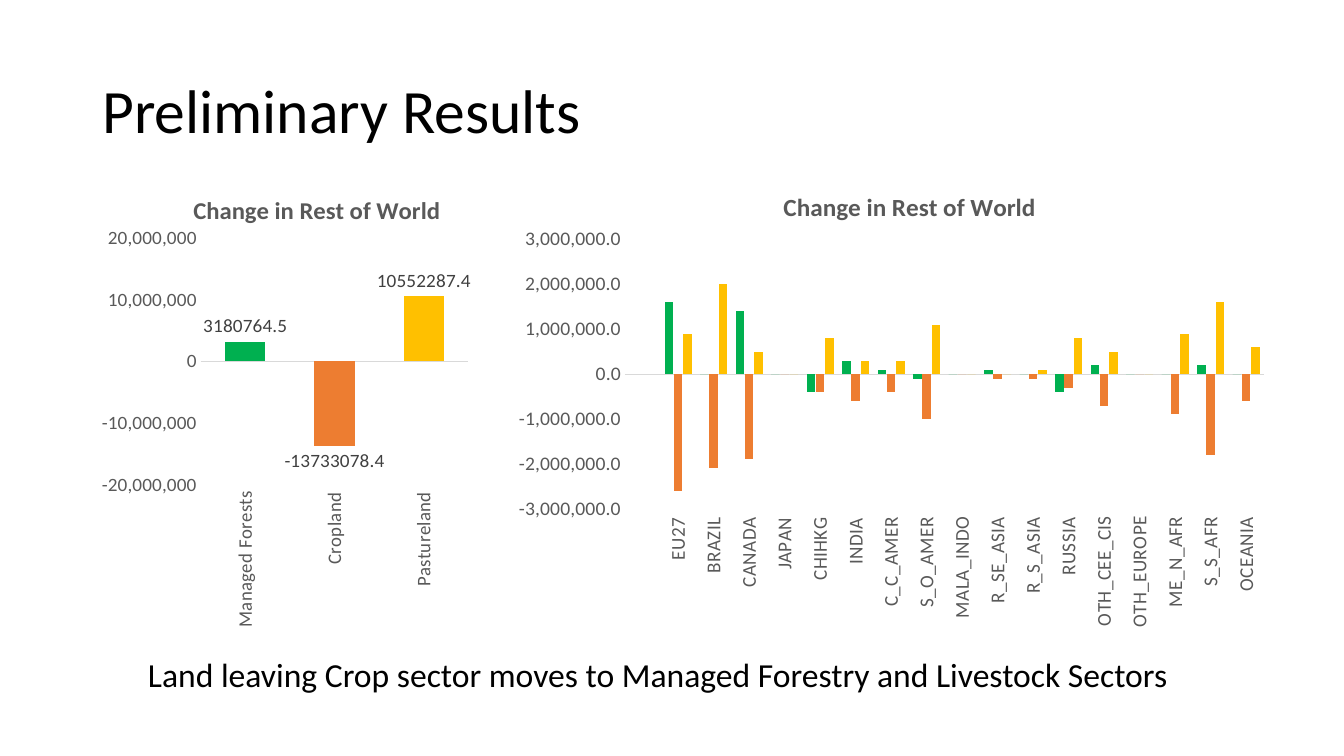
from lxml import etree
from pptx import Presentation
from pptx.chart.data import CategoryChartData as Data
from pptx.dml.color import RGBColor as RGB
from pptx.enum.chart import XL_CHART_TYPE as Kind, XL_LABEL_POSITION as Spot
from pptx.enum.chart import XL_TICK_LABEL_POSITION as Tick, XL_TICK_MARK as Mark
from pptx.enum.text import MSO_ANCHOR as Anchor
from pptx.oxml.ns import qn
from pptx.util import Pt

FONT = "Calibri"
COLORS = {"black": "000000", "grey": "595959", "dark": "404040", "line": "D9D9D9",
          "forest": "00B050", "crop": "ED7D31", "pasture": "FFC000"}
LANDS = ["forest", "crop", "pasture"]


def style(font, size, color, bold=False):
    font.name, font.size, font.bold = FONT, Pt(size), bold
    font.color.rgb = RGB.from_string(COLORS[color])


def place(parent, index, **box):
    for old in parent.findall(qn("c:layout")):
        parent.remove(old)
    layout = etree.Element(qn("c:layout"))
    manual = etree.SubElement(layout, qn("c:manualLayout"))
    if "w" in box:
        etree.SubElement(manual, qn("c:layoutTarget")).set("val", "inner")
    for key in ("x", "y"):
        etree.SubElement(manual, qn(f"c:{key}Mode")).set("val", "edge")
    for key, value in box.items():
        etree.SubElement(manual, qn(f"c:{key}")).set("val", str(value))
    parent.insert(index, layout)


prs = Presentation()
prs.slide_width, prs.slide_height = Pt(960), Pt(540)
slide = prs.slides.add_slide(prs.slide_layouts[6])

texts = [
    ("Preliminary Results", (66, 28.8, 828, 104.4), 44, Anchor.MIDDLE, 0.9),
    ("Land leaving Crop sector moves to Managed Forestry and Livestock Sectors",
     (98.6, 463.7, 836.6, 36), 24, Anchor.TOP, 1.0),
]
for text, box, size, anchor, space in texts:
    frame = slide.shapes.add_textbox(*map(Pt, box)).text_frame
    frame.word_wrap = True
    frame.vertical_anchor = anchor
    line = frame.paragraphs[0]
    line.text = text
    line.line_spacing = space
    style(line.font, size, "black")

regions = ["", "EU27", "BRAZIL", "CANADA", "JAPAN", "CHIHKG", "INDIA", "C_C_AMER",
           "S_O_AMER", "MALA_INDO", "R_SE_ASIA", "R_S_ASIA", "RUSSIA", "OTH_CEE_CIS",
           "OTH_EUROPE", "ME_N_AFR", "S_S_AFR", "OCEANIA"]
changes = [
    [None, 1600000, 0, 1400000, 0, -400000, 300000, 100000, -100000, 0,
     100000, 0, -400000, 200000, 0, 0, 200000, 0],
    [None, -2600000, -2100000, -1900000, 0, -400000, -600000, -400000, -1000000, 0,
     -100000, -100000, -300000, -700000, 0, -900000, -1800000, -600000],
    [None, 900000, 2000000, 500000, 0, 800000, 300000, 300000, 1100000, 0,
     0, 100000, 800000, 500000, 0, 900000, 1600000, 600000],
]
totals = [[3180764.5, -13733078.4, 10552287.4]]

charts = [
    dict(left=72.7, width=287.3, cats=["Managed Forests", "Cropland", "Pastureland"],
         rows=totals, fmt="#,##0", top=20000000, step=10000000, gap=121, lap=10,
         title=dict(x=0.2, y=0.05), plot=dict(x=0.23, y=0.16, w=0.68, h=0.56)),
    dict(left=369.4, width=550, cats=regions,
         rows=changes, fmt="#,##0.0", top=3000000, step=1000000, gap=100, lap=-10,
         title=dict(x=0.34, y=0.04), plot=dict(x=0.14, y=0.16, w=0.83, h=0.6)),
]
for item in charts:
    data = Data()
    data.categories = item["cats"]
    for num, row in enumerate(item["rows"], 1):
        data.add_series(f"Series {num}", row)
    chart = slide.shapes.add_chart(Kind.COLUMN_CLUSTERED, Pt(item["left"]), Pt(119.5),
                                   Pt(item["width"]), Pt(329), data).chart
    style(chart.font, 14, "black")
    chart.has_legend = False

    title = chart.chart_title
    title.text_frame.text = "Change in Rest of World"
    style(title.text_frame.paragraphs[0].font, 18, "grey", True)
    place(title._element, 1, **item["title"])
    place(chart._chartSpace.chart.plotArea, 0, **item["plot"])

    for axis in (chart.category_axis, chart.value_axis):
        axis.major_tick_mark = axis.minor_tick_mark = Mark.NONE
        axis.has_major_gridlines = False
        style(axis.tick_labels.font, 14, "grey")
    cat, val = chart.category_axis, chart.value_axis
    cat.tick_label_position = Tick.LOW
    cat.format.line.width = Pt(0.75)
    cat.format.line.color.rgb = RGB.from_string(COLORS["line"])
    turn = cat._element.find(qn("c:txPr")).find(qn("a:bodyPr"))
    turn.set("rot", "-5400000")
    turn.set("vert", "horz")
    val.format.line.fill.background()
    val.minimum_scale, val.maximum_scale = -item["top"], item["top"]
    val.major_unit = item["step"]
    val.tick_labels.number_format = item["fmt"]
    val.tick_labels.number_format_is_linked = False

    plot = chart.plots[0]
    plot.vary_by_categories = False
    plot.gap_width, plot.overlap = item["gap"], item["lap"]
    bars = list(plot.series)
    for ser in bars:
        ser.invert_if_negative = False
    if len(bars) == 1:
        plot.has_data_labels = True
        labels = plot.data_labels
        labels.show_value = True
        labels.position = Spot.OUTSIDE_END
        labels.number_format = "0.0"
        labels.number_format_is_linked = False
        style(labels.font, 14, "dark")
        bars = [bars[0].points[num] for num in range(len(LANDS))]
    for bar, land in zip(bars, LANDS):
        bar.format.fill.solid()
        bar.format.fill.fore_color.rgb = RGB.from_string(COLORS[land])

prs.save("out.pptx")
